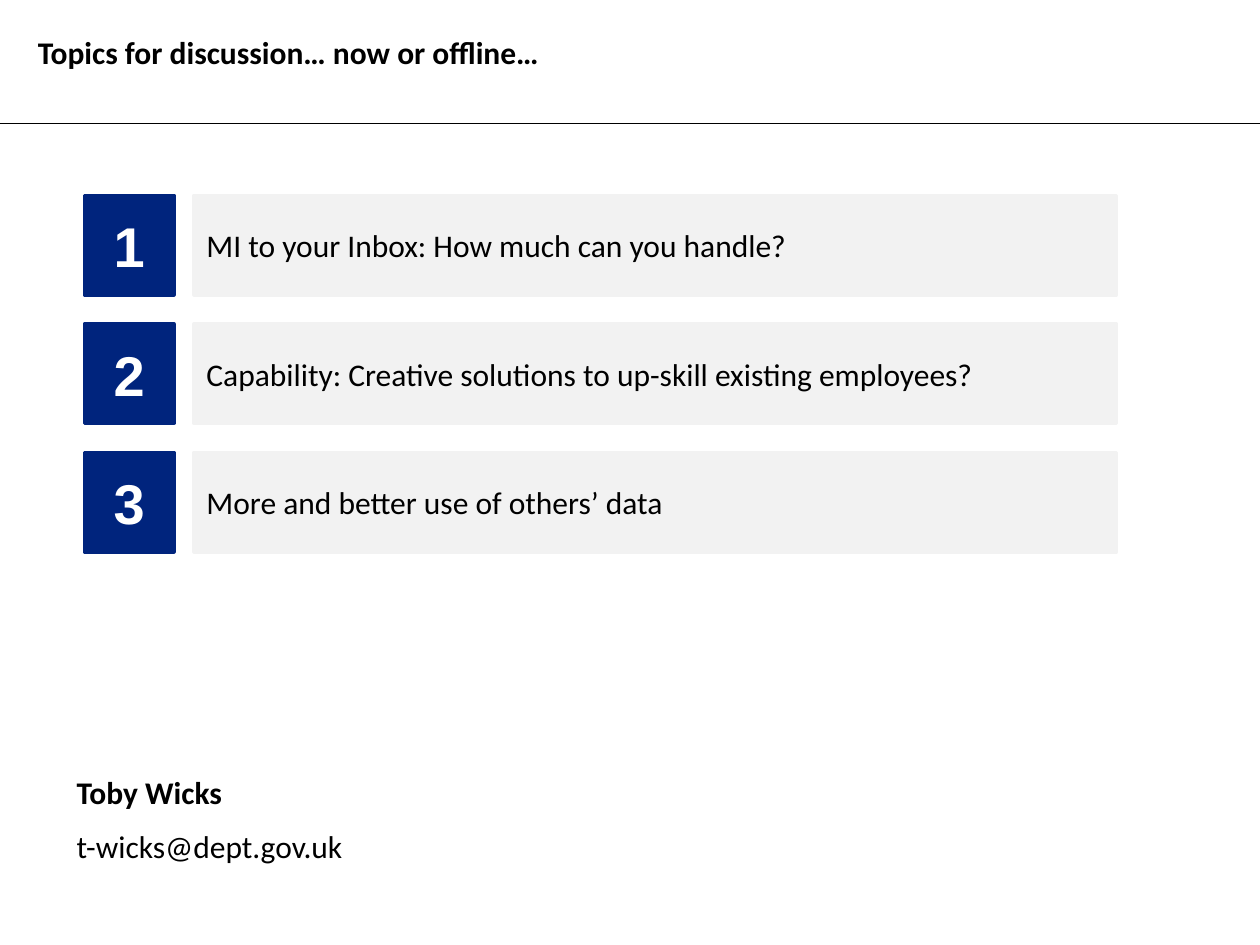
"""Build the closing slide with three discussion topics and a contact."""
from lxml.etree import SubElement
from pptx import Presentation
from pptx.dml.color import RGBColor as RGB
from pptx.enum.shapes import MSO_CONNECTOR as LINK, MSO_SHAPE as SHAPE
from pptx.enum.text import MSO_ANCHOR as ANCHOR, MSO_AUTO_SIZE as FIT, PP_ALIGN as ALIGN
from pptx.oxml.ns import qn
from pptx.util import Inches, Pt

HUES = {"ink": "000000", "navy": "00247D", "pale": "F2F2F2", "white": "FFFFFF"}
TOPICS = [
    "MI to your Inbox: How much can you handle?",
    "Capability: Creative solutions to up-skill existing employees?",
    "More and better use of others’ data",
]
TOP, STEP, HIGH = 1.55, 1.02, 0.79


def style(para, size=18, bold=False, face="Calibri", hue="ink", align=ALIGN.LEFT):
    para.alignment = align
    for run in para.runs:
        run.font.size = Pt(size)
        run.font.bold = bold
        run.font.name = face
        run.font.color.rgb = RGB.from_string(HUES[hue])


def tile(group, left, top, wide, hue, text):
    box = group.shapes.add_shape(
        SHAPE.RECTANGLE, Inches(left), Inches(top), Inches(wide), Inches(HIGH))
    box.shadow.inherit = False
    box.fill.solid()
    box.fill.fore_color.rgb = RGB.from_string(HUES[hue])
    box.line.color.rgb = RGB.from_string(HUES[hue])
    box.line.width = Pt(2)
    box.text_frame.text = text
    box.text_frame.vertical_anchor = ANCHOR.MIDDLE
    return box.text_frame.paragraphs[0]


deck = Presentation()
deck.slide_width, deck.slide_height = Inches(10), Inches(7.5)
slide = deck.slides.add_slide(deck.slide_layouts[5])

title = slide.shapes.title
title.left, title.top = Inches(0.2), Inches(0.21)
title.width, title.height = Inches(7.09), Inches(0.4)
frame = title.text_frame
frame.text = "Topics for discussion… now or offline…"
frame.vertical_anchor = ANCHOR.TOP
frame.auto_size = FIT.SHAPE_TO_FIT_TEXT
style(frame.paragraphs[0], bold=True)

rule = slide.shapes.add_connector(
    LINK.STRAIGHT, 0, Inches(0.98), deck.slide_width, Inches(0.98))
rule.line.color.rgb = RGB.from_string(HUES["ink"])
rule.line.width = Pt(0.75)
SubElement(rule.element.spPr, qn("a:effectLst"))

for row, topic in enumerate(TOPICS):
    top = TOP + row * STEP
    group = slide.shapes.add_group_shape()
    badge = tile(group, 0.67, top, 0.71, "navy", str(row + 1))
    style(badge, 32, True, "Arial", "white", ALIGN.CENTER)
    style(tile(group, 1.54, top, 7.32, "pale", topic))

card = slide.shapes.add_textbox(Inches(0.51), Inches(6.08), Inches(8.98), Inches(0.84))
frame = card.text_frame
frame.word_wrap = True
frame.auto_size = FIT.SHAPE_TO_FIT_TEXT
frame.vertical_anchor = ANCHOR.MIDDLE
frame.text = "Toby Wicks\nt-wicks@dept.gov.uk"
name, mail = frame.paragraphs
style(name, bold=True)
style(mail)
mail.space_before = Pt(9.6)

deck.save("out.pptx")
